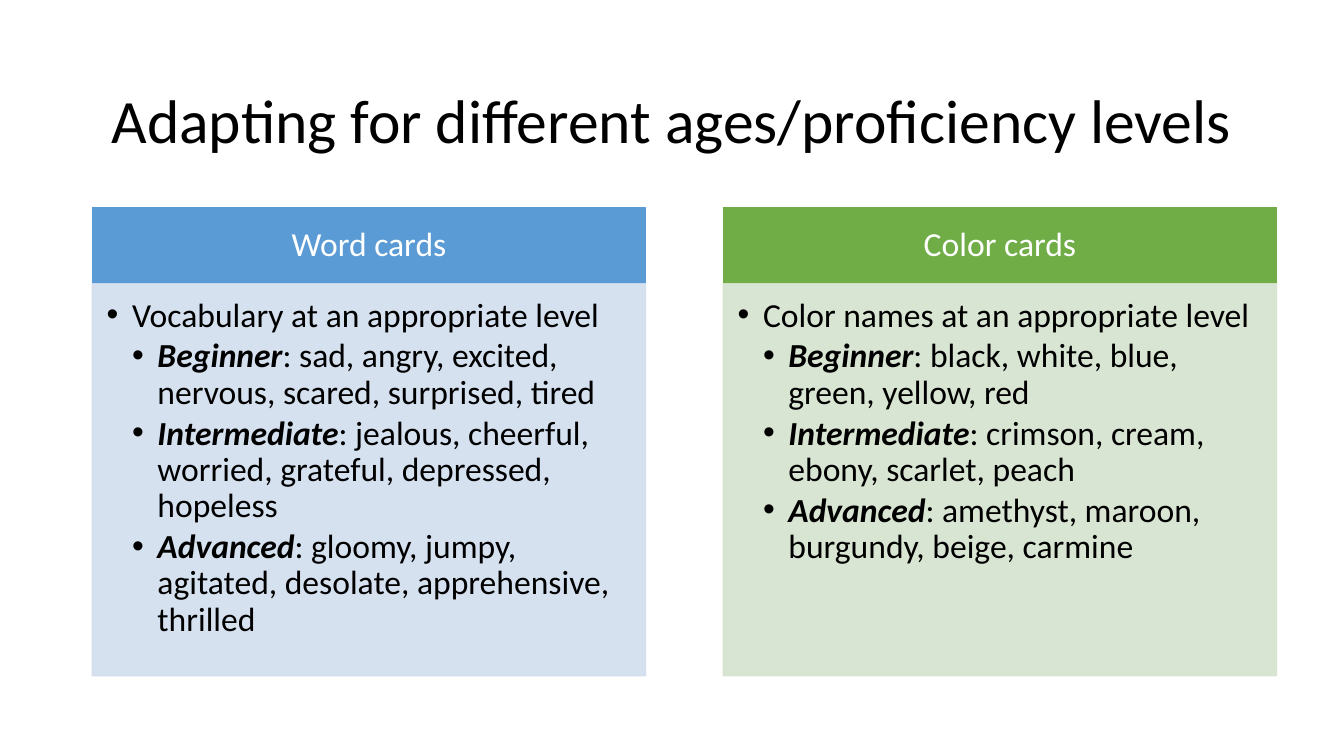
from lxml import etree
from pptx import Presentation
from pptx.dml.color import RGBColor
from pptx.enum.shapes import MSO_SHAPE as Shape
from pptx.enum.text import MSO_ANCHOR as Anchor, PP_ALIGN as Align
from pptx.oxml.ns import qn
from pptx.util import Cm, Pt

TITLE = "Adapting for different ages/proficiency levels"
CARDS = [
    {
        "heading": "Word cards", "color": "5B9BD5", "tint": "D2DEEF",
        "intro": "Vocabulary at an appropriate level",
        "levels": [
            ("Beginner", "sad, angry, excited, nervous, scared, surprised, tired"),
            ("Intermediate", "jealous, cheerful, worried, grateful, depressed, hopeless"),
            ("Advanced", "gloomy, jumpy, agitated, desolate, apprehensive, thrilled"),
        ],
    },
    {
        "heading": "Color cards", "color": "70AD47", "tint": "D5E3CF",
        "intro": "Color names at an appropriate level",
        "levels": [
            ("Beginner", "black, white, blue, green, yellow, red"),
            ("Intermediate", "crimson, cream, ebony, scarlet, peach"),
            ("Advanced", "amethyst, maroon, burgundy, beige, carmine"),
        ],
    },
]

FONT = "Calibri"
LEFT, TOP = 2.33, 5.23
CARD_WIDTH, CARD_PITCH = 13.94, 15.9
HEADER_HEIGHT, BODY_HEIGHT = 1.92, 9.88
INDENT = 0.64


def rgb(color):
    return RGBColor.from_string(color)


def set_opacity(fill, percent):
    for solid in fill.iter(qn("a:srgbClr")):
        etree.SubElement(solid, qn("a:alpha"), val=str(percent * 1000))


def set_frame(frame, insets, anchor):
    """Wrap the text and set insets as left, top, right, bottom in cm."""
    frame.word_wrap = True
    frame.vertical_anchor = anchor
    (frame.margin_left, frame.margin_top,
     frame.margin_right, frame.margin_bottom) = map(Cm, insets)


def add_panel(page, left, top, height, color, opacity=100):
    panel = page.shapes.add_shape(
        Shape.RECTANGLE, Cm(left), Cm(top), Cm(CARD_WIDTH), Cm(height))
    panel.shadow.inherit = False
    panel.fill.solid()
    panel.fill.fore_color.rgb = rgb(color)
    panel.line.color.rgb = rgb(color)
    panel.line.width = Pt(1)
    if opacity < 100:
        set_opacity(panel.fill._xPr, opacity)
    return panel


def add_bullet(para, depth):
    properties = para._p.get_or_add_pPr()
    properties.set("marL", str(Cm(INDENT * depth)))
    properties.set("indent", str(-Cm(INDENT)))
    etree.SubElement(properties, qn("a:buFont"), typeface="Arial")
    etree.SubElement(properties, qn("a:buChar"), char="•")


def style(para, size, color, align):
    para.alignment = align
    para.line_spacing = 0.9
    para.font.name = FONT
    para.font.size = Pt(size)
    para.font.color.rgb = rgb(color)


def add_card(page, left, card):
    header = add_panel(page, left, TOP, HEADER_HEIGHT, card["color"])
    frame = header.text_frame
    set_frame(frame, (0.48, 0.28, 0.48, 0.28), Anchor.MIDDLE)
    frame.text = card["heading"]
    style(frame.paragraphs[0], 24, "FFFFFF", Align.CENTER)

    body = add_panel(page, left, TOP + HEADER_HEIGHT, BODY_HEIGHT, card["tint"], 90)
    frame = body.text_frame
    set_frame(frame, (0.36, 0.36, 0.48, 0.53), Anchor.TOP)
    frame.text = card["intro"]
    add_bullet(frame.paragraphs[0], 1)
    for level, words in card["levels"]:
        para = frame.add_paragraph()
        para.level = 1
        add_bullet(para, 2)
        name = para.add_run()
        name.text = level
        name.font.bold = name.font.italic = True
        para.add_run().text = f": {words}"
    for para in frame.paragraphs:
        style(para, 24, "000000", Align.LEFT)
        para.space_after = Pt(3.3)


def main():
    deck = Presentation()
    deck.slide_width, deck.slide_height = Cm(33.87), Cm(19.05)
    page = deck.slides.add_slide(deck.slide_layouts[6])

    title = page.shapes.add_textbox(Cm(LEFT), Cm(1.55), Cm(29.21), Cm(3.15))
    set_frame(title.text_frame, (0.25, 0.13, 0.25, 0.13), Anchor.MIDDLE)
    title.text_frame.text = TITLE
    style(title.text_frame.paragraphs[0], 44, "000000", Align.CENTER)

    for column, card in enumerate(CARDS):
        add_card(page, LEFT + column * CARD_PITCH, card)
    deck.save("out.pptx")


if __name__ == "__main__":
    main()
